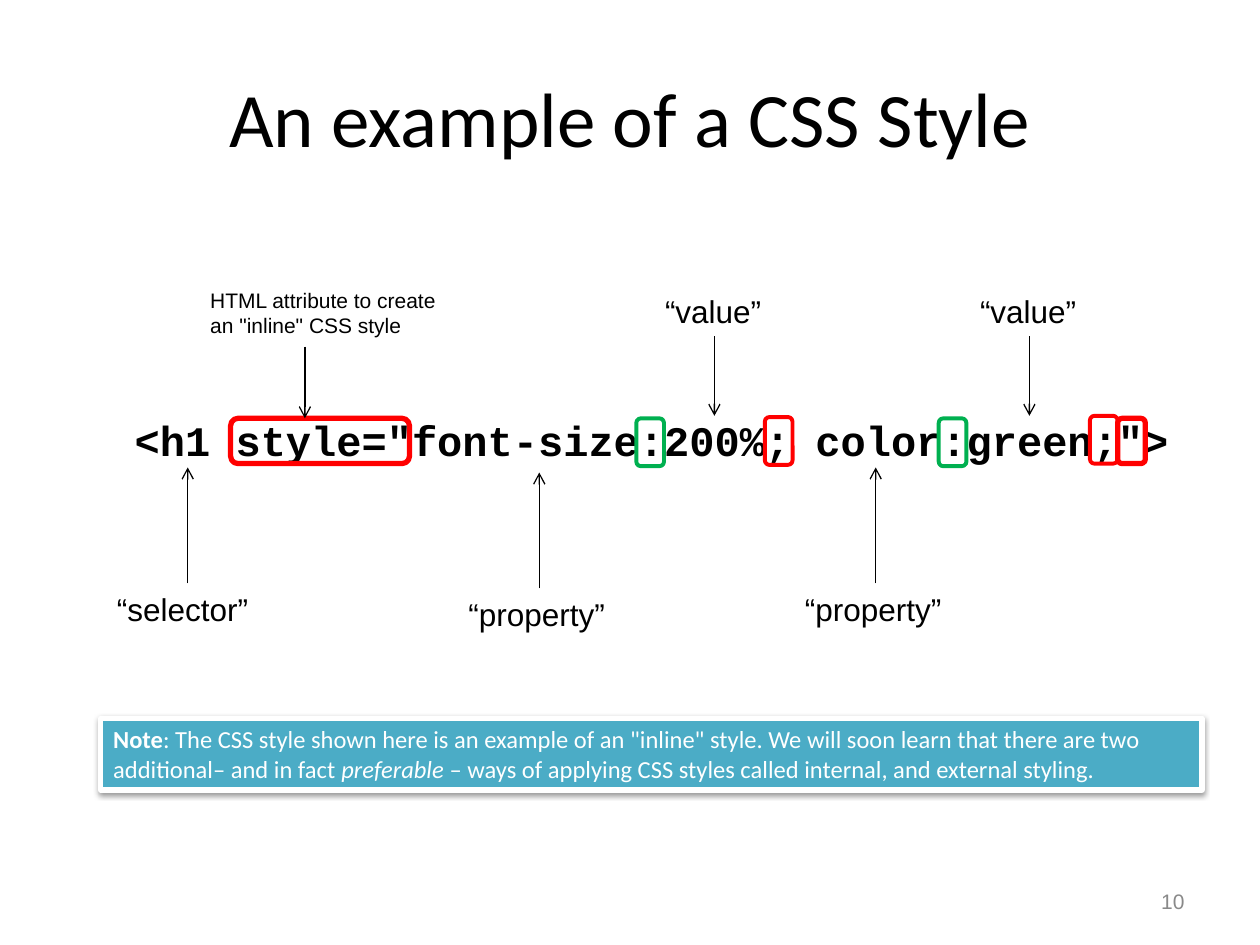
from lxml.etree import SubElement
from pptx import Presentation
from pptx.dml.color import RGBColor
from pptx.enum.shapes import MSO_CONNECTOR, MSO_SHAPE
from pptx.enum.text import MSO_ANCHOR, PP_ALIGN
from pptx.oxml.ns import qn
from pptx.util import Inches, Pt

COLORS = {"black": "000000", "white": "FFFFFF", "grey": "898989",
          "red": "FF0000", "green": "00B050", "teal": "4BACC6"}
LABEL = {"name": "Arial", "size": Pt(18)}
SMALL = {"name": "Arial", "size": Pt(12)}
CODE = {"name": "Courier New", "size": Pt(24), "bold": True}
TITLE = {"name": "Calibri", "size": Pt(44)}
NOTE = {"name": "Calibri", "size": Pt(14)}


def rgb(name):
    return RGBColor.from_string(COLORS[name])


def inches(box):
    return [Inches(v) for v in box]


def add_run(p, text, font, color="black"):
    r = p.add_run()
    r.text = text
    for key, value in font.items():
        setattr(r.font, key, value)
    r.font.color.rgb = rgb(color)


def add_text(s, box, text, font, color="black", align=PP_ALIGN.LEFT,
             anchor=MSO_ANCHOR.TOP, wrap=True):
    tf = s.shapes.add_textbox(*inches(box)).text_frame
    tf.word_wrap = wrap
    tf.vertical_anchor = anchor
    p = tf.paragraphs[0]
    p.alignment = align
    add_run(p, text, font, color)


def add_arrow(s, x, y1, y2):
    """Draw a vertical arrow that points at y2."""
    line = s.shapes.add_connector(MSO_CONNECTOR.STRAIGHT,
                                  *inches((x, y1, x, y2)))
    line.line.color.rgb = rgb("black")
    line.line.width = Pt(0.75)
    SubElement(line.line._get_or_add_ln(), qn("a:tailEnd"), type="arrow")
    SubElement(line._element.spPr, qn("a:effectLst"))


def add_label_above(s, box, text, font, arrow_x, tip, wrap=False):
    left, top, width, height = box
    add_text(s, box, text, font, wrap=wrap)
    add_arrow(s, left + arrow_x, top + height, top + tip)


def add_label_below(s, box, text):
    left, top = box[:2]
    add_text(s, box, text, LABEL, wrap=False)
    add_arrow(s, left + 0.66, top, top - 0.92)


def add_outline(s, box, color, weight):
    sp = s.shapes.add_shape(MSO_SHAPE.ROUNDED_RECTANGLE, *inches(box))
    sp.shadow.inherit = False
    sp.fill.background()
    sp.line.color.rgb = rgb(color)
    sp.line.width = Pt(weight)


def add_code_line(s, box):
    """Write the CSS line and outline its punctuation."""
    left, top = box[:2]
    add_text(s, box, '<h1 style="font-size:200%; color:green;">', CODE,
             align=PP_ALIGN.CENTER)
    outlines = [(5.4, 0.07, 0.22, 0.38, "red", 2.25),
                (7.98, 0.06, 0.22, 0.38, "red", 2.25),
                (4.38, 0.08, 0.22, 0.38, "green", 2.25),
                (6.78, 0.08, 0.22, 0.38, "green", 2.25),
                (1.16, 0.08, 1.42, 0.36, "red", 3),
                (8.2, 0.08, 0.22, 0.36, "red", 3)]
    for dx, dy, width, height, color, weight in outlines:
        add_outline(s, (left + dx, top + dy, width, height), color, weight)


def add_note(s, box):
    sp = s.shapes.add_shape(MSO_SHAPE.RECTANGLE, *inches(box))
    sp.shadow.inherit = False
    sp.fill.solid()
    sp.fill.fore_color.rgb = rgb("teal")
    sp.line.color.rgb = rgb("white")
    sp.line.width = Pt(3)
    effects = sp._element.spPr.find(qn("a:effectLst"))
    shadow = SubElement(effects, qn("a:outerShdw"), blurRad=str(Pt(3.1)),
                        dist=str(Pt(1.6)), dir="5400000", rotWithShape="0")
    tint = SubElement(shadow, qn("a:srgbClr"), val=COLORS["black"])
    SubElement(tint, qn("a:alpha"), val="38000")

    tf = sp.text_frame
    tf.word_wrap = True
    tf.vertical_anchor = MSO_ANCHOR.TOP
    p = tf.paragraphs[0]
    p.alignment = PP_ALIGN.LEFT
    parts = [("Note", {"bold": True}),
             (': The CSS style shown here is an example of an "inline" style. '
              "We will soon learn that there are two additional– and in fact ",
              {}),
             ("preferable", {"italic": True}),
             (" – ways of applying CSS styles called internal, and external "
              "styling.", {})]
    for text, emphasis in parts:
        add_run(p, text, NOTE | emphasis, "white")


def main():
    prs = Presentation()
    prs.slide_width, prs.slide_height = Inches(10), Inches(7.5)
    s = prs.slides.add_slide(prs.slide_layouts[6])

    add_text(s, (0.5, 0.3, 9, 1.25), "An example of a CSS Style", TITLE,
             align=PP_ALIGN.CENTER, anchor=MSO_ANCHOR.MIDDLE)
    add_text(s, (7.17, 6.95, 2.33, 0.4), "10", SMALL, "grey",
             PP_ALIGN.RIGHT, MSO_ANCHOR.MIDDLE)

    add_code_line(s, (0.67, 3.24, 9, 0.51))
    add_label_above(s, (1.57, 2.23, 2.19, 0.52),
                    'HTML attribute to create an "inline" CSS style',
                    SMALL, 0.85, 1.09, wrap=True)
    for left in (5.18, 7.68):
        add_label_above(s, (left, 2.27, 0.97, 0.4), "“value”", LABEL,
                        0.49, 1.03)
    add_label_below(s, (0.83, 4.63, 1.25, 0.4), "“selector”")
    add_label_below(s, (3.62, 4.67, 1.3, 0.4), "“property”")
    add_label_below(s, (6.29, 4.63, 1.3, 0.4), "“property”")
    add_note(s, (0.8, 5.7, 8.74, 0.57))

    prs.save("out.pptx")


if __name__ == "__main__":
    main()
